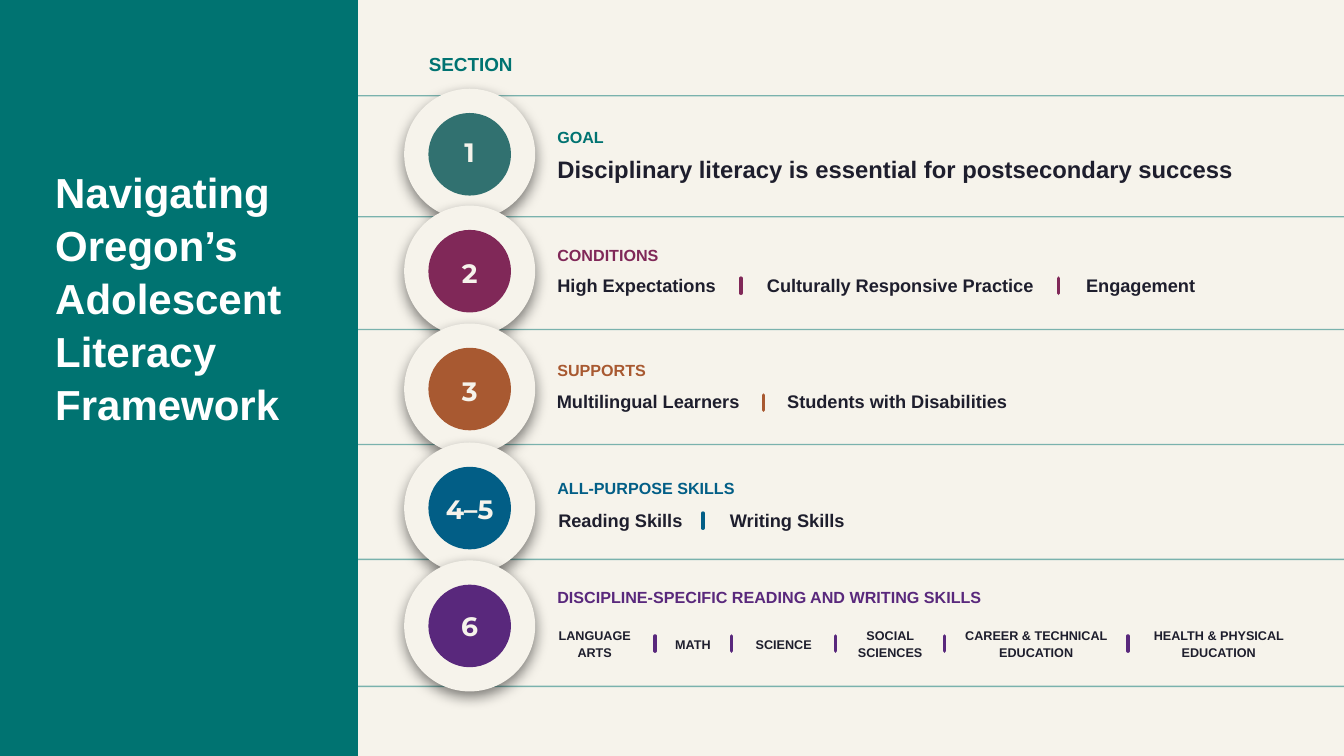
from lxml import etree
from pptx import Presentation
from pptx.dml.color import RGBColor
from pptx.enum.shapes import MSO_CONNECTOR, MSO_SHAPE
from pptx.enum.text import PP_ALIGN
from pptx.oxml import parse_xml
from pptx.oxml.ns import qn
from pptx.util import Pt

NAMESPACE = 'xmlns:a="http://schemas.openxmlformats.org/drawingml/2006/main"'
TEAL, CREAM, INK = "007371", "F6F3EB", "1E1E2D"
PANEL_WIDTH = 255.6
CIRCLE_CENTER = 335.5
LABEL_LEFT = 391
SHADOW = (
    f'<a:effectLst {NAMESPACE}><a:outerShdw blurRad="{Pt(10)}" dist="{Pt(4)}" dir="5400000" '
    'algn="ctr" rotWithShape="0"><a:srgbClr val="000000"><a:alpha val="49000"/></a:srgbClr>'
    "</a:outerShdw></a:effectLst>"
)

presentation = Presentation()
presentation.slide_width, presentation.slide_height = Pt(960), Pt(540)
slide = presentation.slides.add_slide(presentation.slide_layouts[6])
color = RGBColor.from_string
slide.background.fill.solid()
slide.background.fill.fore_color.rgb = color(CREAM)


def add_text(text, left, top, width, height, size, fill, font="Arial", centered=True, spacing=1.0):
    """Add bold text; centered labels get narrower side insets."""
    box = slide.shapes.add_textbox(Pt(left), Pt(top), Pt(width), Pt(height))
    frame = box.text_frame
    frame.word_wrap = True
    frame.margin_left = frame.margin_right = Pt(4 if centered else 7.2)
    frame.text = text
    paragraph = frame.paragraphs[0]
    paragraph.alignment = PP_ALIGN.CENTER if centered else PP_ALIGN.LEFT
    paragraph.line_spacing = spacing
    run_font = paragraph.runs[0].font
    run_font.name, run_font.size, run_font.bold = font, Pt(size), True
    run_font.color.rgb = color(fill)


def add_line(x1, y1, x2, y2, stroke, width):
    connector = slide.shapes.add_connector(MSO_CONNECTOR.STRAIGHT, Pt(x1), Pt(y1), Pt(x2), Pt(y2))
    connector.line.color.rgb = color(stroke)
    connector.line.width = Pt(width)
    etree.SubElement(connector._element.spPr, qn("a:effectLst"))
    return connector


panel = slide.shapes.add_shape(MSO_SHAPE.RECTANGLE, 0, 0, Pt(PANEL_WIDTH), Pt(540))
panel.shadow.inherit = False
panel.fill.solid()
panel.fill.fore_color.rgb = color(TEAL)
panel.line.fill.background()
add_text("Navigating Oregon’s Adolescent Literacy Framework", 32.4, 113.8, 223.2, 189.4, 30,
         "FFFFFF", centered=False, spacing=1.05)
add_text("SECTION", 291.6, 33.8, 89.3, 23.8, 13.5, TEAL)

for y in (68.4, 154.8, 235.4, 317.5, 399.6, 490.3):
    rule = add_line(PANEL_WIDTH, y, 960, y, TEAL, 1)
    rule_color = rule._element.spPr.find(".//" + qn("a:srgbClr"))
    etree.SubElement(rule_color, qn("a:alpha"), val="49000")

# number, color, circle center y, number top, heading, heading top
sections = [
    ("1", "317170", 110.2, 93.6, "GOAL", 87.8),
    ("2", "802858", 193.7, 180, "CONDITIONS", 171.4),
    ("3", "A85931", 277.9, 264.2, "SUPPORTS", 254.2),
    ("4–5", "025E86", 362.9, 348.5, "ALL-PURPOSE SKILLS", 338.4),
    ("6", "59287C", 447.1, 432, "DISCIPLINE-SPECIFIC READING AND WRITING SKILLS", 416.2),
]
for number, accent, center_y, number_top, heading, heading_top in sections:
    for diameter, fill in ((93.6, CREAM), (59, accent)):
        circle = slide.shapes.add_shape(
            MSO_SHAPE.OVAL, Pt(CIRCLE_CENTER - diameter / 2), Pt(center_y - diameter / 2),
            Pt(diameter), Pt(diameter))
        circle.fill.solid()
        circle.fill.fore_color.rgb = color(fill)
        circle.line.fill.background()
        if fill == CREAM:
            circle._element.spPr.append(parse_xml(SHADOW))
        else:
            circle.shadow.inherit = False
    add_text(number, CIRCLE_CENTER - 26, number_top, 52, 30.2, 19, CREAM, "Montserrat")
    heading_color = TEAL if number == "1" else accent
    add_text(heading, LABEL_LEFT, heading_top, 341, 20.9, 11.5, heading_color, centered=False)

add_text("Disciplinary literacy is essential for postsecondary success",
         LABEL_LEFT, 107.3, 536.4, 28.1, 17, INK, centered=False)

# accent, label top, divider top, divider positions, (label, left, width)
skill_rows = [
    ("802858", 192.2, 198.7, (529.2, 756),
     [("High Expectations", 390.2, 128.9), ("Culturally Responsive Practice", 540, 205.9),
      ("Engagement", 766.1, 97.2)]),
    ("A85931", 275, 282.2, (545.2,),
     [("Multilingual Learners", 390.2, 145.4), ("Students with Disabilities", 554.4, 172.8)]),
    ("025E86", 360, 366.5, (502,),
     [("Reading Skills", 390.2, 105.8), ("Writing Skills", 507.6, 109.4)]),
]
discipline_row = (
    "59287C", 444.2, 454.3, (468, 522.7, 596.9, 674.6, 805.7),
    [("LANGUAGE ARTS", 388.8, 72), ("MATH", 474.5, 41), ("SCIENCE", 529.9, 59.8),
     ("SOCIAL SCIENCES", 604.1, 63.4), ("CAREER & TECHNICAL EDUCATION", 681.8, 116.6),
     ("HEALTH & PHYSICAL EDUCATION", 812.2, 116.6)])

for row in skill_rows + [discipline_row]:
    accent, label_top, divider_top, dividers, labels = row
    for label, left, width in labels:
        if row is discipline_row:
            one_line_offset = 0 if " " in label else 5.8
            add_text(label, left, label_top + one_line_offset, width, 30.2, 9, INK, spacing=1.1)
        else:
            add_text(label, left, label_top, width, 23.8, 13, INK)
    for x in dividers:
        divider = add_line(x, divider_top, x, divider_top + 10.8, accent, 2.5)
        divider.line._get_or_add_ln().set("cap", "rnd")

presentation.save("out.pptx")
